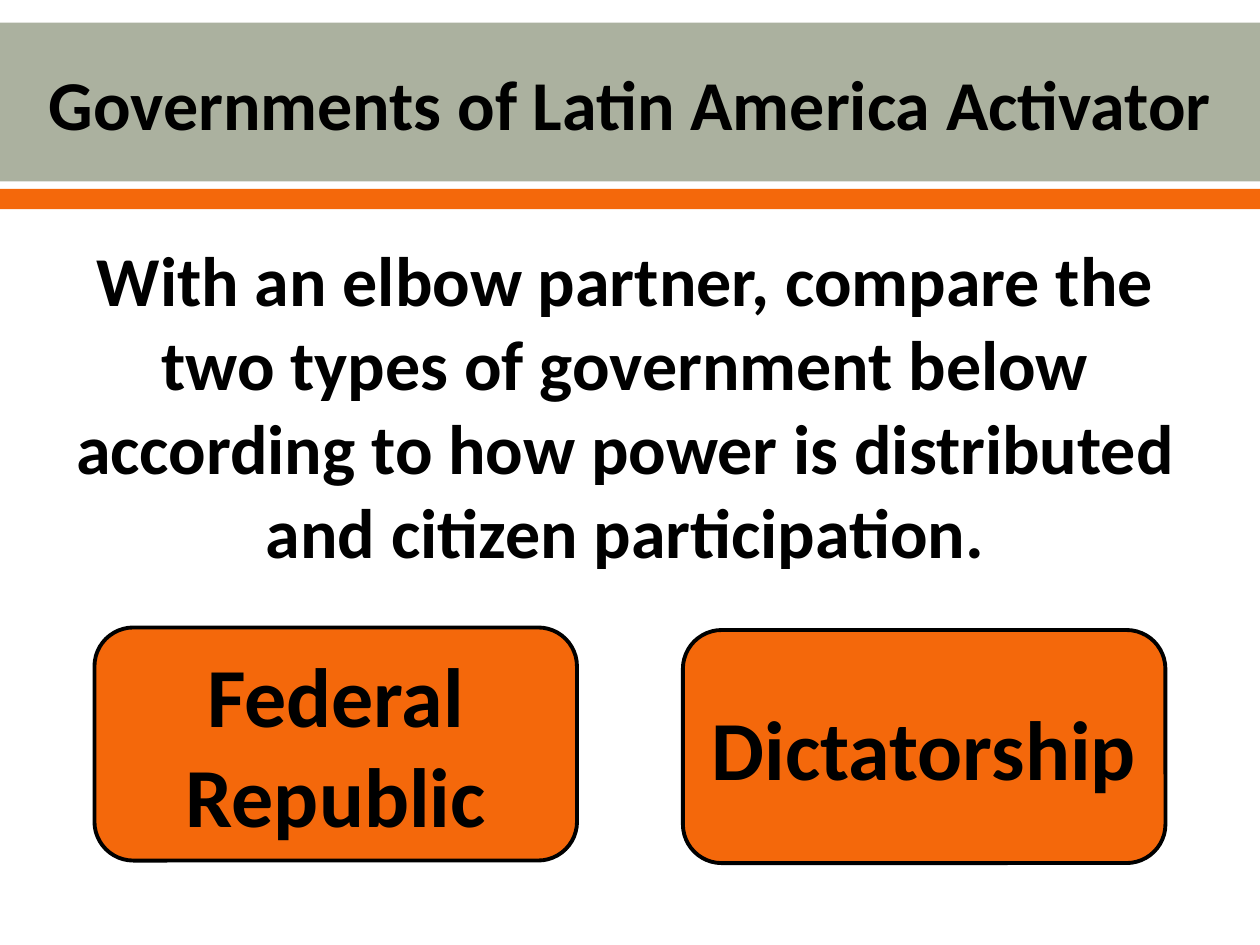
from dataclasses import dataclass

from pptx import Presentation
from pptx.dml.color import RGBColor
from pptx.enum.shapes import MSO_SHAPE
from pptx.enum.text import MSO_ANCHOR, MSO_AUTO_SIZE, PP_ALIGN
from pptx.shapes.autoshape import Shape
from pptx.slide import Slide
from pptx.text.text import TextFrame
from pptx.util import Inches, Pt

SAGE = RGBColor(0xAB, 0xB1, 0x9F)
ORANGE = RGBColor(0xF4, 0x68, 0x0B)
BLACK = RGBColor(0, 0, 0)


@dataclass(frozen=True)
class Band:
    top: float
    height: float
    color: RGBColor


@dataclass(frozen=True)
class GovernmentCard:
    left: float
    top: float
    lines: tuple[str, ...]


BANDS = (Band(0.18, 1.26, SAGE), Band(1.5, 0.16, ORANGE))
CARDS = (
    GovernmentCard(0.75, 4.98, ("Federal", "Republic")),
    GovernmentCard(5.42, 5, ("Dictatorship",)),
)


def write_text(text_frame: TextFrame, lines: tuple[str, ...], size: int, anchor: MSO_ANCHOR) -> None:
    text_frame.word_wrap = True
    text_frame.auto_size = MSO_AUTO_SIZE.NONE
    text_frame.vertical_anchor = anchor
    paragraph = text_frame.paragraphs[0]
    paragraph.alignment = PP_ALIGN.CENTER
    for index, line in enumerate(lines):
        if index:
            paragraph.add_line_break()
        run = paragraph.add_run()
        run.text = line
        run.font.name = "Calibri"
        run.font.size = Pt(size)
        run.font.bold = True
        run.font.color.rgb = BLACK


def add_filled_shape(slide: Slide, kind: MSO_SHAPE, left: float, top: float,
                     width: float, height: float, color: RGBColor) -> Shape:
    shape = slide.shapes.add_shape(kind, Inches(left), Inches(top), Inches(width), Inches(height))
    shape.shadow.inherit = False
    shape.fill.solid()
    shape.fill.fore_color.rgb = color
    shape.line.fill.background()
    return shape


def add_band(slide: Slide, band: Band) -> None:
    add_filled_shape(slide, MSO_SHAPE.RECTANGLE, 0, band.top, 10, band.height, band.color)


def add_title(slide: Slide, text: str) -> None:
    title = slide.shapes.title
    title.left, title.top = Inches(0), Inches(0.2)
    title.width, title.height = Inches(10), Inches(1.22)
    write_text(title.text_frame, (text,), 40, MSO_ANCHOR.MIDDLE)
    slide.shapes._spTree.append(title._element)


def add_instruction(slide: Slide, text: str) -> None:
    instruction = slide.shapes.add_textbox(Inches(0.17), Inches(1.83), Inches(9.58), Inches(2.79))
    write_text(instruction.text_frame, (text,), 40, MSO_ANCHOR.TOP)


def add_card(slide: Slide, card: GovernmentCard) -> None:
    shape = add_filled_shape(slide, MSO_SHAPE.ROUNDED_RECTANGLE, card.left, card.top, 3.83, 1.85, ORANGE)
    shape.line.color.rgb = BLACK
    shape.line.width = Pt(2.22)
    write_text(shape.text_frame, card.lines, 48, MSO_ANCHOR.MIDDLE)


def main() -> None:
    presentation = Presentation()
    presentation.slide_width = Inches(10)
    presentation.slide_height = Inches(7.5)
    slide = presentation.slides.add_slide(presentation.slide_layouts[5])
    for band in BANDS:
        add_band(slide, band)
    add_title(slide, "Governments of Latin America Activator")
    add_instruction(
        slide,
        "With an elbow partner, compare the two types of government below "
        "according to how power is distributed and citizen participation.",
    )
    for card in CARDS:
        add_card(slide, card)
    presentation.save("out.pptx")


if __name__ == "__main__":
    main()
